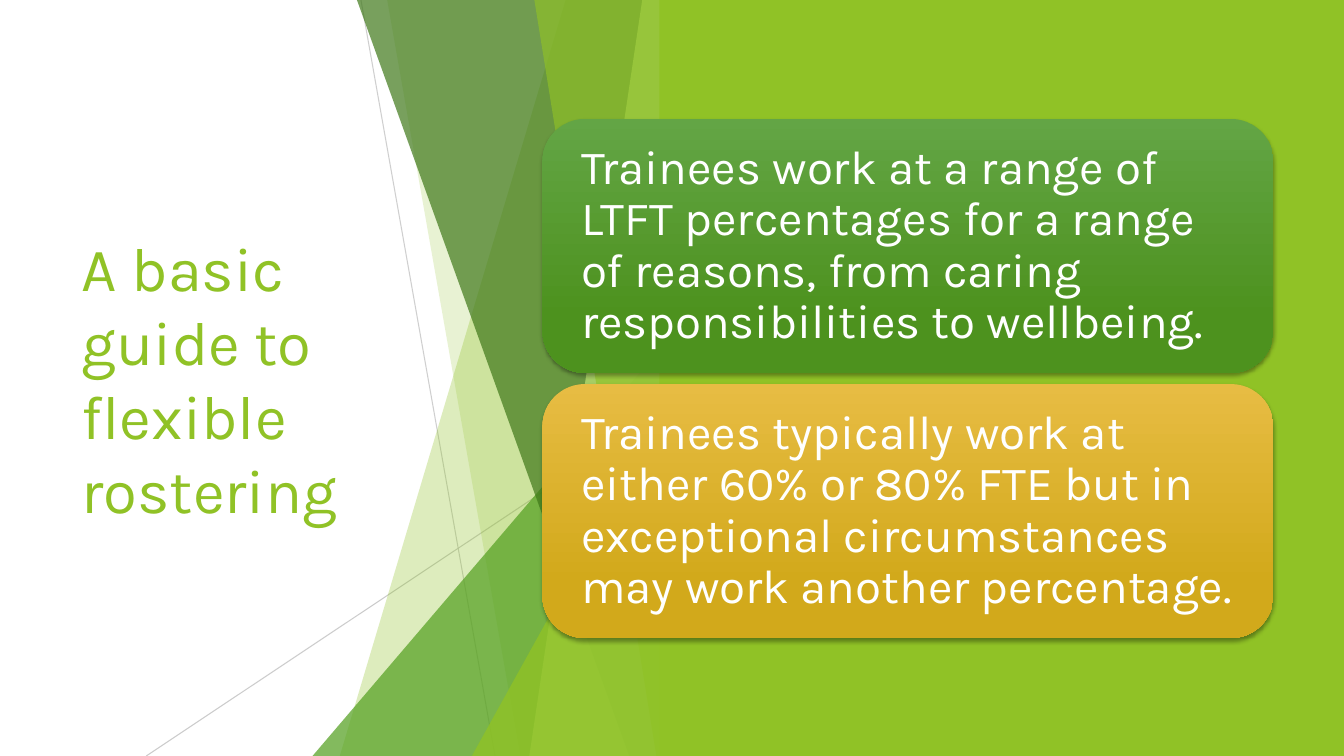
from dataclasses import dataclass

from lxml import etree
from pptx import Presentation, util as u
from pptx.dml.color import RGBColor
from pptx.enum import shapes, text
from pptx.oxml import ns

PX = 9144  # EMU per px, 100 px to the inch
WIDTH, HEIGHT = 1333, 750


@dataclass(frozen=True)
class Theme:
    font: str = "Karla"
    title_size: int = 44
    card_size: int = 34
    lime: str = "90C226"
    pale_lime: str = "C0E474"
    green: str = "54A021"
    dark_green: str = "3F7819"
    white: str = "FFFFFF"
    grey: str = "BFBFBF"
    green_card: tuple = ("63A545", "4D921E")
    gold_card: tuple = ("E7BC43", "D2A91B")


THEME = Theme()

RAYS = [((358, 0), (491, 750), 75), ((666, 403), (145, 750), 80)]

# Facets: ("band", top left, bottom left) or ("wedge", left, top), colour, opacity
FACETS = [
    ("band", 561, 337, THEME.lime, 30),
    ("band", 384, 516, THEME.lime, 20),
    ("wedge", 310, 333, THEME.green, 72),
    ("band", 354, 624, THEME.dark_green, 70),
    ("band", 637, 525, THEME.pale_lime, 70),
    ("band", 530, 651, THEME.lime, 65),
    ("wedge", 468, 393, THEME.lime, 80),
]
FACET_RIGHT = 666

CARD_LEFT, CARD_TOP, CARD_WIDTH, CARD_HEIGHT, CARD_STEP = 538, 118, 725, 252, 263
CARDS = [
    ("Trainees work at a range of LTFT percentages for a range of reasons, "
     "from caring responsibilities to wellbeing.", THEME.green_card),
    ("Trainees typically work at either 60% or 80% FTE but in exceptional "
     "circumstances may work another percentage.", THEME.gold_card),
]


def px(*lengths):
    return [u.Emu(length * PX) for length in lengths]


def apply_format(target, values):
    for name, value in values.items():
        setattr(target, name, value)


def set_opacity(owner, percent):
    """Make the solid colour inside a fill or line see-through."""
    colour = owner.find(".//" + ns.qn("a:srgbClr"))
    etree.SubElement(colour, ns.qn("a:alpha"), val=str(percent * 1000))


def paint(shape, colour, opacity=100):
    shape.shadow.inherit = False
    shape.line.fill.background()
    shape.fill.solid()
    shape.fill.fore_color.rgb = RGBColor.from_string(colour)
    if opacity < 100:
        set_opacity(shape._element.spPr, opacity)


def write(shape, words, size, colour, frame_format, paragraph_format):
    frame = shape.text_frame
    frame.text = words
    apply_format(frame, {"word_wrap": True, "auto_size": text.MSO_AUTO_SIZE.NONE,
                         "vertical_anchor": text.MSO_ANCHOR.MIDDLE, **frame_format})
    paragraph = frame.paragraphs[0]
    apply_format(paragraph, {"alignment": text.PP_ALIGN.LEFT, **paragraph_format})
    font = paragraph.runs[0].font
    apply_format(font, {"name": THEME.font, "size": u.Pt(size)})
    font.color.rgb = RGBColor.from_string(colour)


def add_title(slide, words):
    title = slide.shapes.title
    left, top, width, height, right_margin = px(71, 151, 388, 448, 30)
    apply_format(title, {"left": left, "top": top, "width": width, "height": height})
    write(title, words, THEME.title_size, THEME.lime, {"margin_right": right_margin}, {})


def add_ray(slide, start, end, opacity):
    ray = slide.shapes.add_connector(shapes.MSO_CONNECTOR.STRAIGHT, *px(*start, *end))
    ray.line.width = u.Pt(0.75)
    ray.line.color.rgb = RGBColor.from_string(THEME.grey)
    properties = ray._element.spPr
    set_opacity(properties, opacity)
    etree.SubElement(properties, ns.qn("a:effectLst"))


def add_band(slide, top_left, bottom_left):
    """Full-height facet with a slanted left side."""
    builder = slide.shapes.build_freeform(top_left, 0, scale=PX)
    builder.add_line_segments(
        [(FACET_RIGHT, 0), (FACET_RIGHT, HEIGHT), (bottom_left, HEIGHT)])
    return builder.convert_to_shape()


def add_wedge(slide, left, top):
    """Triangle with its right angle at the bottom right."""
    wedge = slide.shapes.add_shape(shapes.MSO_SHAPE.ISOSCELES_TRIANGLE,
                                   *px(left, top, FACET_RIGHT - left, HEIGHT - top))
    wedge.adjustments[0] = 1
    return wedge


def add_panel(slide, left):
    panel = slide.shapes.add_shape(shapes.MSO_SHAPE.RECTANGLE,
                                   *px(left, 0, WIDTH - left, HEIGHT))
    paint(panel, THEME.lime)


def add_soft_shadow(shape):
    shape.shadow.inherit = False
    effects = shape._element.spPr.find(ns.qn("a:effectLst"))
    shadow = etree.SubElement(effects, ns.qn("a:outerShdw"), blurRad=str(u.Pt(3)),
                              dist=str(u.Pt(2)), dir="5400000", rotWithShape="0")
    colour = etree.SubElement(shadow, ns.qn("a:srgbClr"), val="000000")
    etree.SubElement(colour, ns.qn("a:alpha"), val="35000")


def add_card(slide, top, words, colours):
    card = slide.shapes.add_shape(shapes.MSO_SHAPE.ROUNDED_RECTANGLE,
                                  *px(CARD_LEFT, top, CARD_WIDTH, CARD_HEIGHT))
    card.line.fill.background()
    card.fill.gradient()
    card.fill.gradient_angle = 270
    for stop, position, colour in zip(card.fill.gradient_stops, (0, 0.78), colours):
        stop.position = position
        stop.color.rgb = RGBColor.from_string(colour)
    add_soft_shadow(card)
    margin, = px(26)
    margins = {f"margin_{side}": margin for side in ("left", "top", "right", "bottom")}
    write(card, words, THEME.card_size, THEME.white, margins, {"line_spacing": 0.9})


def main():
    presentation = Presentation()
    presentation.slide_width, presentation.slide_height = px(WIDTH, HEIGHT)
    slide = presentation.slides.add_slide(presentation.slide_layouts.get_by_name("Title Only"))

    add_title(slide, "A basic guide to flexible rostering")
    for start, end, opacity in RAYS:
        add_ray(slide, start, end, opacity)
    builders = {"band": add_band, "wedge": add_wedge}
    for kind, first, second, colour, opacity in FACETS:
        paint(builders[kind](slide, first, second), colour, opacity)
    add_panel(slide, 654)
    for index, (words, colours) in enumerate(CARDS):
        add_card(slide, CARD_TOP + index * CARD_STEP, words, colours)

    presentation.save("out.pptx")


if __name__ == "__main__":
    main()
